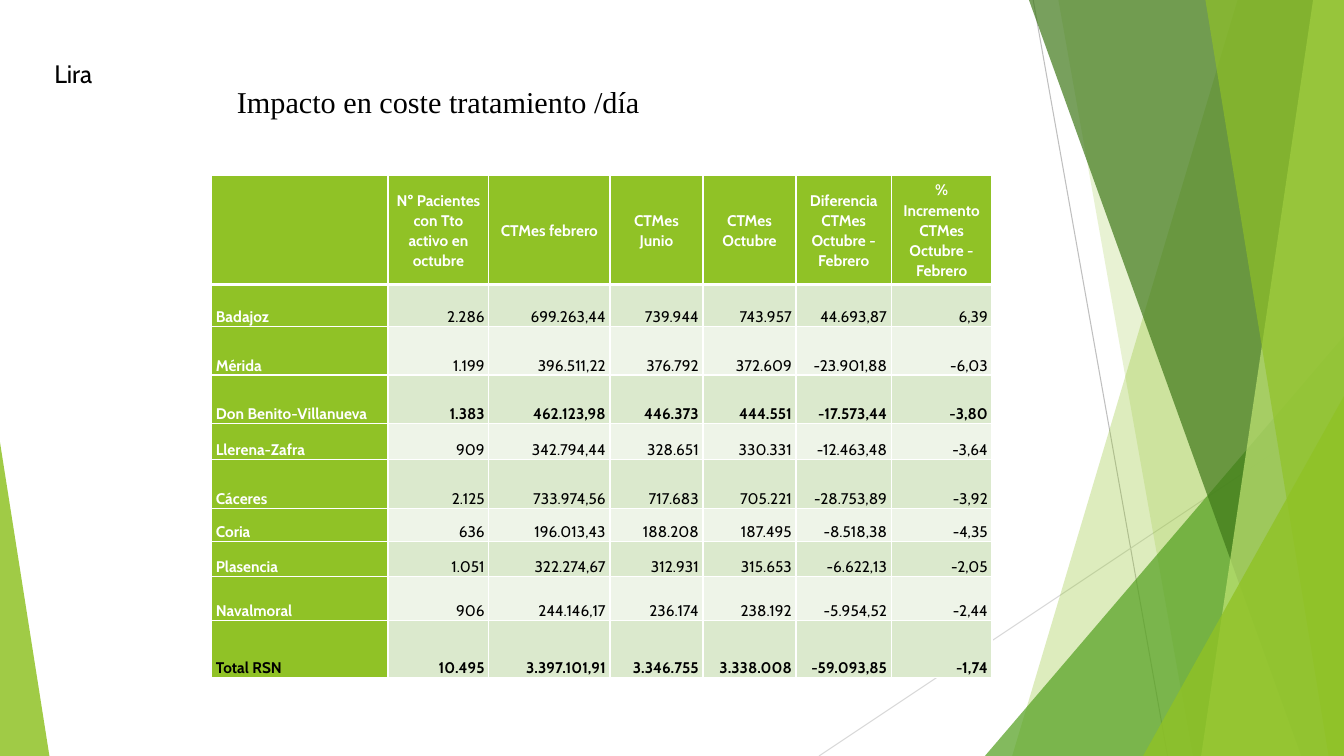
from dataclasses import dataclass

from lxml import etree
from pptx import Presentation
from pptx.dml.color import RGBColor
from pptx.enum.shapes import MSO_CONNECTOR, MSO_SHAPE
from pptx.enum.text import MSO_ANCHOR, MSO_AUTO_SIZE, PP_ALIGN
from pptx.oxml.ns import qn
from pptx.util import Pt

STRAIGHT = MSO_CONNECTOR.STRAIGHT
TRIANGLE = MSO_SHAPE.ISOSCELES_TRIANGLE
LEFT, CENTER, RIGHT = PP_ALIGN.LEFT, PP_ALIGN.CENTER, PP_ALIGN.RIGHT
TOP, MIDDLE, BOTTOM = MSO_ANCHOR.TOP, MSO_ANCHOR.MIDDLE, MSO_ANCHOR.BOTTOM
FIT_SHAPE = MSO_AUTO_SIZE.SHAPE_TO_FIT_TEXT


@dataclass(frozen=True)
class Theme:
    black: str = "000000"
    white: str = "FFFFFF"
    lime: str = "90C226"
    leaf: str = "54A021"
    forest: str = "3F7819"
    pale: str = "C0E474"
    band_dark: str = "DBE9CD"
    band_light: str = "EEF4E8"
    line_dark: str = "BFBFBF"
    line_light: str = "D9D9D9"
    body_font: str = "Cabin"
    title_font: str = "Times New Roman"
    title_size: float = 21.6
    label_size: float = 18
    table_size: float = 11


THEME = Theme()

TOTAL_NAME = "Total RSN"
COLUMN_WIDTHS = [126, 72, 86.5, 66.5, 66.5, 68, 72]
ROW_HEIGHTS = [78, 30, 34.6, 34.6, 26, 34.6, 24, 25, 31, 41]
COST_ROWS = [
    ["", "Nº Pacientes con Tto activo en octubre", "CTMes febrero", "CTMes\nJunio",
     "CTMes Octubre", "Diferencia CTMes Octubre - Febrero",
     "% Incremento CTMes Octubre - Febrero"],
    ["Badajoz", "2.286", "699.263,44", "739.944", "743.957", "44.693,87", "6,39"],
    ["Mérida", "1.199", "396.511,22", "376.792", "372.609", "-23.901,88", "-6,03"],
    ["Don Benito-Villanueva", "1.383", "462.123,98", "446.373", "444.551",
     "-17.573,44", "-3,80"],
    ["Llerena-Zafra", "909", "342.794,44", "328.651", "330.331", "-12.463,48", "-3,64"],
    ["Cáceres", "2.125", "733.974,56", "717.683", "705.221", "-28.753,89", "-3,92"],
    ["Coria", "636", "196.013,43", "188.208", "187.495", "-8.518,38", "-4,35"],
    ["Plasencia", "1.051", "322.274,67", "312.931", "315.653", "-6.622,13", "-2,05"],
    ["Navalmoral", "906", "244.146,17", "236.174", "238.192", "-5.954,52", "-2,44"],
    [TOTAL_NAME, "10.495", "3.397.101,91", "3.346.755", "3.338.008",
     "-59.093,85", "-1,74"],
]
BOLD_ROWS = {"Don Benito-Villanueva", TOTAL_NAME}


def write(frame, text, *, size, font=THEME.body_font, color=THEME.black,
          bold=False, align=LEFT, spacing=1.0):
    frame.word_wrap = True
    para = frame.paragraphs[0]
    para.alignment = align
    para.line_spacing = spacing
    for number, line in enumerate(text.split("\n")):
        if number:
            para.add_line_break()
        span = para.add_run()
        span.text = line
        span.font.name = font
        span.font.size = Pt(size)
        span.font.bold = bold
        span.font.color.rgb = RGBColor.from_string(color)


def paint(shape, color, opacity):
    shape.shadow.inherit = False
    shape.line.fill.background()
    shape.fill.solid()
    shape.fill.fore_color.rgb = RGBColor.from_string(color)
    tint = shape.element.spPr.find(".//" + qn("a:srgbClr"))
    etree.SubElement(tint, qn("a:alpha"), val=str(opacity * 1000))


def add_thin_line(page, start, end, color):
    line = page.shapes.add_connector(STRAIGHT, *map(Pt, start + end))
    line.line.color.rgb = RGBColor.from_string(color)
    line.line.width = Pt(0.75)
    etree.SubElement(line.element.spPr, qn("a:effectLst"))


def add_band(page, box, top_x, bottom_x, color, opacity):
    left, top, width, height = box
    right, bottom = left + width, top + height
    outline = page.shapes.build_freeform(Pt(left + top_x), Pt(top))
    corners = [(right, top), (right, bottom), (left + bottom_x, bottom)]
    outline.add_line_segments([(Pt(x), Pt(y)) for x, y in corners], close=True)
    paint(outline.convert_to_shape(), color, opacity)


def add_corner(page, box, apex, color, opacity):
    corner = page.shapes.add_shape(TRIANGLE, *map(Pt, box))
    corner.adjustments[0] = apex
    paint(corner, color, opacity)


def add_right_foliage(page, box):
    left, top, width, height = box
    right, bottom = left + width, top + height

    def right_corner(corner_width, corner_height, color, opacity):
        corner_box = (right - corner_width, bottom - corner_height,
                      corner_width, corner_height)
        add_corner(page, corner_box, 1, color, opacity)

    add_thin_line(page, (left + 153, top), (left + 249, bottom), THEME.line_dark)
    add_thin_line(page, (right, top + 290), (left, bottom), THEME.line_light)
    add_band(page, box, 299, 138, THEME.lime, 30)
    add_band(page, box, 171, 267, THEME.lime, 20)
    right_corner(256.5, 300, THEME.leaf, 72)
    add_band(page, box, 150, 344.5, THEME.forest, 70)
    add_band(page, box, 353, 273, THEME.pale, 70)
    add_band(page, box, 276, 364, THEME.lime, 65)
    right_corner(143.5, 257, THEME.lime, 80)


def add_title(page, box, text):
    title = page.shapes.title
    title.left, title.top, title.width, title.height = map(Pt, box)
    title.text_frame.vertical_anchor = TOP
    title.text_frame.auto_size = FIT_SHAPE
    write(title.text_frame, text, size=THEME.title_size, font=THEME.title_font)


def add_label(page, box, text):
    label = page.shapes.add_textbox(*map(Pt, box))
    label.text_frame.auto_size = FIT_SHAPE
    write(label.text_frame, text, size=THEME.label_size)


def set_borders(cell, **widths):
    properties = cell._tc.get_or_add_tcPr()
    for position, side in enumerate("LRTB"):
        border = etree.Element(qn("a:ln" + side), w=str(Pt(widths.get(side, 1))))
        fill = etree.SubElement(border, qn("a:solidFill"))
        etree.SubElement(fill, qn("a:srgbClr"), val=THEME.white)
        properties.insert(position, border)


def format_cell(cell, text, row, column, bold_row):
    is_header, is_name = row == 0, column == 0
    band = THEME.band_dark if row % 2 else THEME.band_light
    is_white = is_header or (is_name and text != TOTAL_NAME)
    cell.fill.solid()
    cell.fill.fore_color.rgb = RGBColor.from_string(
        THEME.lime if is_header or is_name else band)
    cell.margin_left = cell.margin_right = Pt(3)
    cell.margin_top = cell.margin_bottom = 0
    cell.vertical_anchor = MIDDLE if is_header else BOTTOM
    set_borders(cell, T=3 if row == 1 else 1, B=3 if is_header else 1)
    if text:
        write(cell.text_frame, text, size=THEME.table_size,
              color=THEME.white if is_white else THEME.black,
              bold=is_header or is_name or bold_row,
              align=CENTER if is_header else LEFT if is_name else RIGHT,
              spacing=1.07)


def add_cost_table(page, box):
    frame = page.shapes.add_table(len(COST_ROWS), len(COLUMN_WIDTHS), *map(Pt, box))
    table = frame.table
    table.first_col = True
    for column, width in zip(table.columns, COLUMN_WIDTHS):
        column.width = Pt(width)
    for row, height in zip(table.rows, ROW_HEIGHTS):
        row.height = Pt(height)
    for row, texts in enumerate(COST_ROWS):
        for column, text in enumerate(texts):
            format_cell(table.cell(row, column), text, row, column,
                        texts[0] in BOLD_ROWS)


def build_cost_slide(deck):
    page = deck.slides.add_slide(deck.slide_layouts[5])
    add_right_foliage(page, (585, 0, 375, 540))
    add_corner(page, (0, 316, 35.3, 224), 0, THEME.lime, 85)
    add_title(page, (162, 56, 558, 33), "Impacto en coste tratamiento /día")
    add_cost_table(page, (151.2, 125.3, sum(COLUMN_WIDTHS), sum(ROW_HEIGHTS)))
    add_label(page, (31.7, 38.2, 96, 29), "Lira")


def main():
    deck = Presentation()
    deck.slide_width, deck.slide_height = Pt(960), Pt(540)
    build_cost_slide(deck)
    deck.save("out.pptx")


if __name__ == "__main__":
    main()
